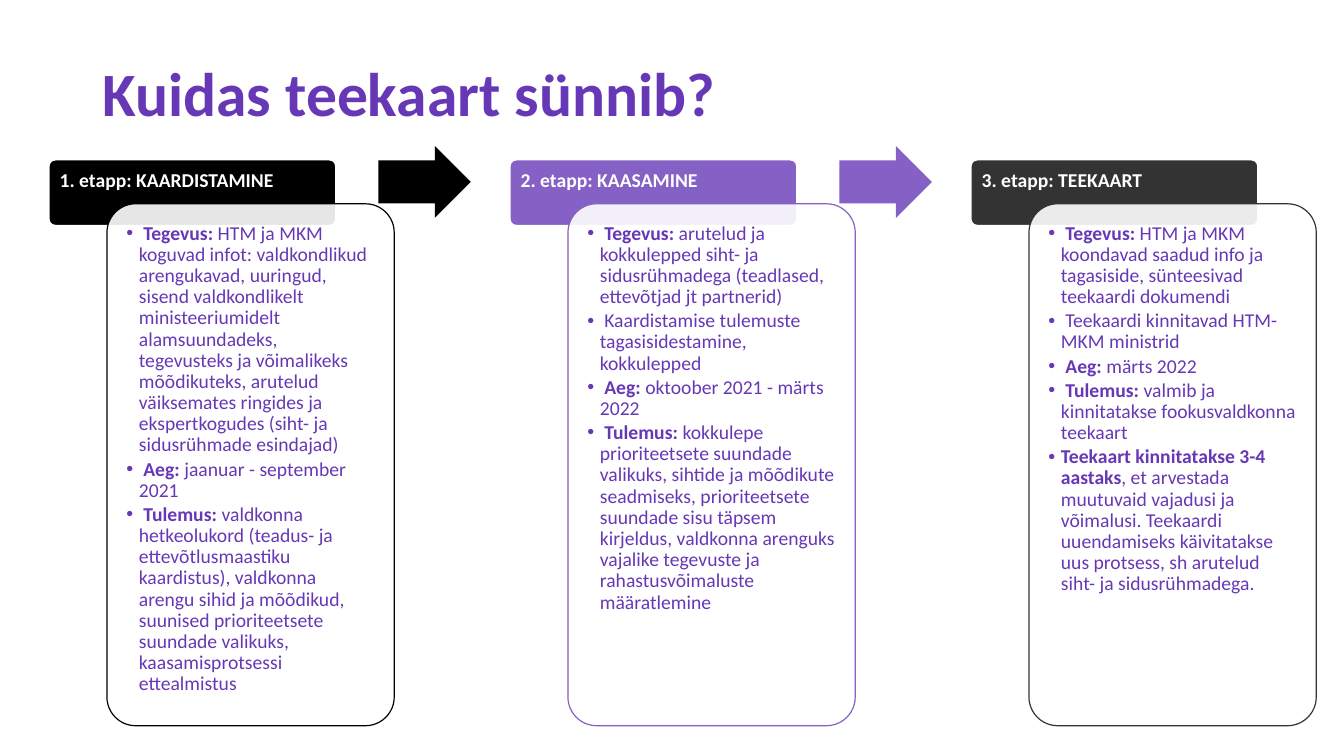
from lxml import etree
from pptx import Presentation
from pptx.dml.color import RGBColor
from pptx.enum.shapes import MSO_SHAPE as Preset
from pptx.enum.text import MSO_ANCHOR as Anchor, MSO_AUTO_SIZE as AutoSize, PP_ALIGN as Align
from pptx.oxml.ns import qn
from pptx.util import Pt

PURPLE = RGBColor(0x66, 0x38, 0xB6)
LIGHT_PURPLE = RGBColor(0x85, 0x60, 0xC5)
BLACK = RGBColor(0x00, 0x00, 0x00)
CHARCOAL = RGBColor(0x33, 0x33, 0x33)
WHITE = RGBColor(0xFF, 0xFF, 0xFF)

FIRST_LEFT, STAGE_PITCH = 34.8, 329.3
HEADER_TOP, CARD_TOP, ARROW_TOP = 114, 145.6, 104.4
CARD_SHIFT, ARROW_SHIFT = 41.6, 235.5

# Text between asterisks is bold.
STAGES = [
    ("1. etapp: KAARDISTAMINE", BLACK, [
        "* Tegevus: *HTM ja MKM koguvad infot: valdkondlikud arengukavad, uuringud, "
        "sisend valdkondlikelt ministeeriumidelt alamsuundadeks, tegevusteks ja "
        "võimalikeks mõõdikuteks, arutelud väiksemates ringides ja ekspertkogudes "
        "(siht- ja sidusrühmade esindajad)",
        "* Aeg: *jaanuar - september 2021",
        " *Tulemus: *valdkonna hetkeolukord (teadus- ja ettevõtlusmaastiku kaardistus), "
        "valdkonna arengu sihid ja mõõdikud, suunised prioriteetsete suundade valikuks, "
        "kaasamisprotsessi ettealmistus",
    ]),
    ("2. etapp: KAASAMINE", LIGHT_PURPLE, [
        " *Tegevus:* arutelud ja kokkulepped siht- ja sidusrühmadega (teadlased, "
        "ettevõtjad jt partnerid)",
        " Kaardistamise tulemuste tagasisidestamine, kokkulepped",
        "* Aeg: *oktoober 2021 - märts 2022",
        " *Tulemus: *kokkulepe prioriteetsete suundade valikuks, sihtide ja mõõdikute "
        "seadmiseks, prioriteetsete suundade sisu täpsem kirjeldus, valdkonna arenguks "
        "vajalike tegevuste ja rahastusvõimaluste määratlemine",
    ]),
    ("3. etapp: TEEKAART", CHARCOAL, [
        " *Tegevus:* HTM ja MKM koondavad saadud info ja tagasiside, sünteesivad "
        "teekaardi dokumendi",
        " Teekaardi kinnitavad HTM-MKM ministrid",
        " *Aeg:* märts 2022",
        " *Tulemus: *valmib ja kinnitatakse fookusvaldkonna teekaart",
        "*Teekaart kinnitatakse 3-4 aastaks*, et arvestada muutuvaid vajadusi ja võimalusi. "
        "Teekaardi uuendamiseks käivitatakse uus protsess, sh arutelud siht- ja "
        "sidusrühmadega.",
    ]),
]


def add_bullet(paragraph):
    properties = paragraph._p.get_or_add_pPr()
    properties.set("marL", str(Pt(9)))
    properties.set("indent", str(-Pt(9)))
    etree.SubElement(properties, qn("a:buFont"), typeface="Arial")
    etree.SubElement(properties, qn("a:buChar"), char="•")


def write_text(frame, lines, *, font="Calibri", size=14, color=PURPLE, bold=False,
               anchor=Anchor.TOP, inset=None, bullets=False, space_after=0):
    """Fill a text frame with one paragraph per line; asterisks switch bold."""
    frame.word_wrap = True
    frame.auto_size = AutoSize.NONE
    frame.vertical_anchor = anchor
    if inset is not None:
        frame.margin_left = frame.margin_right = Pt(inset)
        frame.margin_top = frame.margin_bottom = Pt(inset)
    for index, line in enumerate(lines):
        paragraph = frame.add_paragraph() if index else frame.paragraphs[0]
        if bullets:
            paragraph.level = 1
            add_bullet(paragraph)
        paragraph.alignment = Align.LEFT
        paragraph.line_spacing = 0.9
        paragraph.space_before = Pt(0)
        paragraph.space_after = Pt(space_after)
        for part, words in enumerate(line.split("*")):
            if words:
                run = paragraph.add_run()
                run.text = words
                run.font.name = font
                run.font.size = Pt(size)
                run.font.bold = bold or part % 2 == 1
                run.font.color.rgb = color


class StageSlide:
    def __init__(self, presentation):
        self.slide = presentation.slides.add_slide(presentation.slide_layouts[5])

    def add_title(self, text):
        title = self.slide.shapes.title
        title.left, title.top, title.width, title.height = Pt(66), Pt(16.6), Pt(828), Pt(104.4)
        write_text(title.text_frame, [text], size=44, bold=True, anchor=Anchor.MIDDLE)

    def add_shape(self, preset, left, top, width, height, adjustments, fill,
                  line=None, line_width=1.2):
        shape = self.slide.shapes.add_shape(preset, Pt(left), Pt(top), Pt(width), Pt(height))
        shape.shadow.inherit = False
        for index, value in enumerate(adjustments):
            shape.adjustments[index] = value
        shape.fill.solid()
        shape.fill.fore_color.rgb = fill
        if line is None:
            shape.line.fill.background()
        else:
            shape.line.color.rgb = line
            shape.line.width = Pt(line_width)
        return shape

    def add_header(self, left, text, color):
        header = self.add_shape(Preset.ROUNDED_RECTANGLE, left, HEADER_TOP, 205.2, 47.2,
                                [0.1], color, line=WHITE)
        write_text(header.text_frame, [text], color=WHITE, bold=True, inset=6.4)

    def add_card(self, left, lines, color):
        card = self.add_shape(Preset.ROUNDED_RECTANGLE, left, CARD_TOP, 205.2, 372.8,
                              [0.1], WHITE, line=color, line_width=0.85)
        fill_color = card._element.spPr.find(qn("a:solidFill"))[0]
        etree.SubElement(fill_color, qn("a:alpha"), val="90000")
        write_text(card.text_frame, lines, inset=7.8, bullets=True, space_after=2.1)

    def add_arrow(self, left, color):
        self.add_shape(Preset.RIGHT_ARROW, left, ARROW_TOP, 66, 51.2, [0.6, 0.5], color)


def main():
    presentation = Presentation()
    presentation.slide_width, presentation.slide_height = Pt(960), Pt(540)
    stage_slide = StageSlide(presentation)
    stage_slide.add_title("Kuidas teekaart sünnib?")
    for index, (heading, color, lines) in enumerate(STAGES):
        left = FIRST_LEFT + index * STAGE_PITCH
        stage_slide.add_header(left, heading, color)
        stage_slide.add_card(left + CARD_SHIFT, lines, color)
        if index < len(STAGES) - 1:
            stage_slide.add_arrow(left + ARROW_SHIFT, color)
    presentation.save("out.pptx")


if __name__ == "__main__":
    main()
